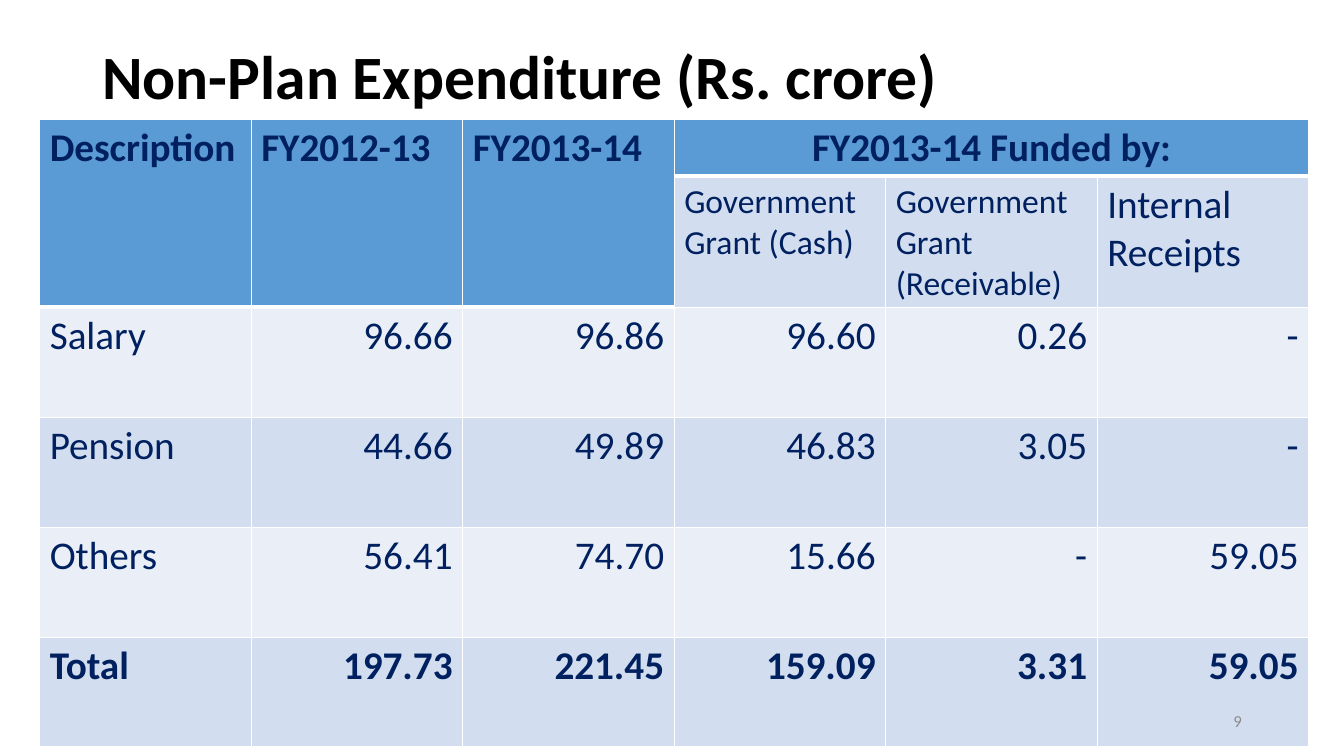
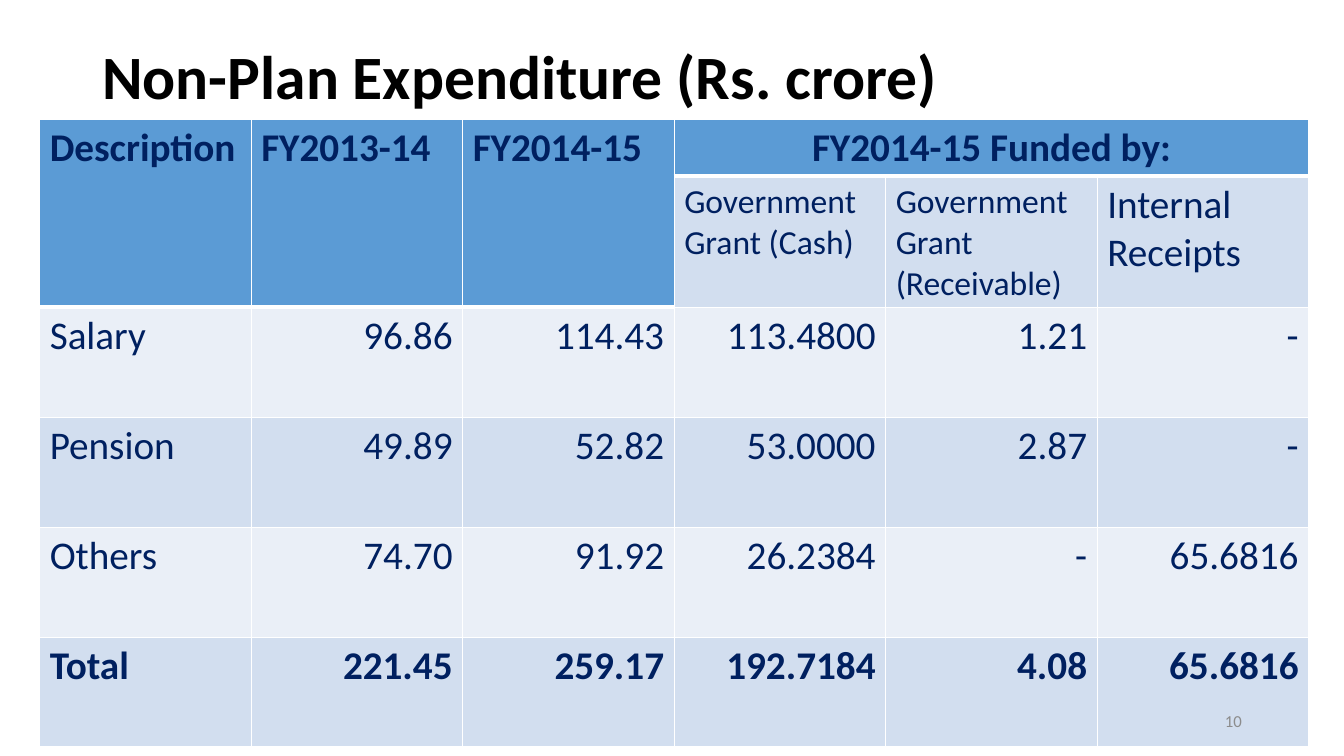
from lxml.etree import SubElement
from pptx import Presentation
from pptx.dml.color import RGBColor
from pptx.enum.text import MSO_ANCHOR as Anchor, PP_ALIGN as Align
from pptx.oxml.ns import qn
from pptx.util import Cm, Pt

FONT = "Calibri"
BLACK, NAVY, GREY, WHITE = "000000", "002060", "8C8C8C", "FFFFFF"
HEADER_FILL, DARK_BAND, LIGHT_BAND = "5B9BD5", "D2DEEF", "EAEFF7"

TITLE = "Non-Plan Expenditure (Rs. crore)"
FUNDING_SOURCES = [
    ("Government Grant (Cash)", 24),
    ("Government Grant (Receivable)", 24),
    ("Internal Receipts", 28),
]
COLUMN_WIDTH = 5.33
ROW_HEIGHTS = [1.4, 3.23] + [2.77] * 4
COLUMN_COUNT = 6
YEAR_COLUMNS = 3

BUDGETS = [
    (9, "FY2012-13", "FY2013-14", [
        ("Salary", "96.66", "96.86", "96.60", "0.26", "-"),
        ("Pension", "44.66", "49.89", "46.83", "3.05", "-"),
        ("Others", "56.41", "74.70", "15.66", "-", "59.05"),
        ("Total", "197.73", "221.45", "159.09", "3.31", "59.05"),
    ]),
    (10, "FY2013-14", "FY2014-15", [
        ("Salary", "96.86", "114.43", "113.4800", "1.21", "-"),
        ("Pension", "49.89", "52.82", "53.0000", "2.87", "-"),
        ("Others", "74.70", "91.92", "26.2384", "-", "65.6816"),
        ("Total", "221.45", "259.17", "192.7184", "4.08", "65.6816"),
    ]),
]


def rgb(color):
    return RGBColor.from_string(color)


def write(frame, text, size, color, bold=False, align=Align.LEFT):
    paragraph = frame.paragraphs[0]
    paragraph.alignment = align
    run = paragraph.add_run()
    run.text = text
    run.font.name = FONT
    run.font.size = Pt(size)
    run.font.bold = bold
    run.font.color.rgb = rgb(color)
    return paragraph


def add_label(slide, left, top, width, height, text, size, color, **style):
    box = slide.shapes.add_textbox(Cm(left), Cm(top), Cm(width), Cm(height))
    frame = box.text_frame
    frame.word_wrap = True
    frame.vertical_anchor = Anchor.MIDDLE
    return write(frame, text, size, color, **style)


def add_title(slide):
    title = add_label(slide, 2.33, 1.02, 29.21, 1.98, TITLE, 44, BLACK, bold=True)
    title.line_spacing = 0.9


def add_page_number(slide, number):
    add_label(slide, 23.93, 17.65, 7.62, 1.02, str(number), 12, GREY, align=Align.RIGHT)


def is_header(row, column):
    return row == 0 or (row == 1 and column < YEAR_COLUMNS)


def line_below(row, column):
    return 3 if row >= 0 and is_header(row, column) else 1


def set_borders(cell, row, column):
    properties = cell._tc.get_or_add_tcPr()
    weights = {"L": 1, "R": 1, "T": line_below(row - 1, column), "B": line_below(row, column)}
    for side, weight in weights.items():
        line = SubElement(properties, qn(f"a:ln{side}"), w=str(Pt(weight)))
        fill = SubElement(line, qn("a:solidFill"))
        SubElement(fill, qn("a:srgbClr"), val=WHITE)


def paint_cell(cell, row, column):
    set_borders(cell, row, column)
    band = DARK_BAND if row % 2 else LIGHT_BAND
    cell.fill.solid()
    cell.fill.fore_color.rgb = rgb(HEADER_FILL if is_header(row, column) else band)


def add_grid(slide):
    frame = slide.shapes.add_table(
        len(ROW_HEIGHTS), COLUMN_COUNT, Cm(1), Cm(3),
        Cm(COLUMN_WIDTH * COLUMN_COUNT), Cm(sum(ROW_HEIGHTS)))
    table = frame.table
    table.first_row = table.horz_banding = False
    for column in table.columns:
        column.width = Cm(COLUMN_WIDTH)
    for row, height in zip(table.rows, ROW_HEIGHTS):
        row.height = Cm(height)
    for row in range(len(ROW_HEIGHTS)):
        for column in range(COLUMN_COUNT):
            paint_cell(table.cell(row, column), row, column)
    for column in range(YEAR_COLUMNS):
        table.cell(0, column).merge(table.cell(1, column))
    table.cell(0, YEAR_COLUMNS).merge(table.cell(0, COLUMN_COUNT - 1))
    return table


def add_budget_table(slide, previous_year, current_year, lines):
    table = add_grid(slide)

    def write_cell(row, column, text, size=28, **style):
        write(table.cell(row, column).text_frame, text, size, NAVY, **style)

    for column, heading in enumerate(["Description", previous_year, current_year]):
        write_cell(0, column, heading, bold=True)
    write_cell(0, YEAR_COLUMNS, f"{current_year} Funded by:", bold=True, align=Align.CENTER)
    for column, (source, size) in enumerate(FUNDING_SOURCES, YEAR_COLUMNS):
        write_cell(1, column, source, size)
    for row, line in enumerate(lines, 2):
        for column, text in enumerate(line):
            write_cell(row, column, text, bold=line[0] == "Total",
                       align=Align.RIGHT if column else Align.LEFT)


def main():
    deck = Presentation()
    deck.slide_width, deck.slide_height = Cm(33.87), Cm(19.05)
    for number, previous_year, current_year, lines in BUDGETS:
        slide = deck.slides.add_slide(deck.slide_layouts[6])
        add_title(slide)
        add_budget_table(slide, previous_year, current_year, lines)
        add_page_number(slide, number)
    deck.save("out.pptx")


if __name__ == "__main__":
    main()
